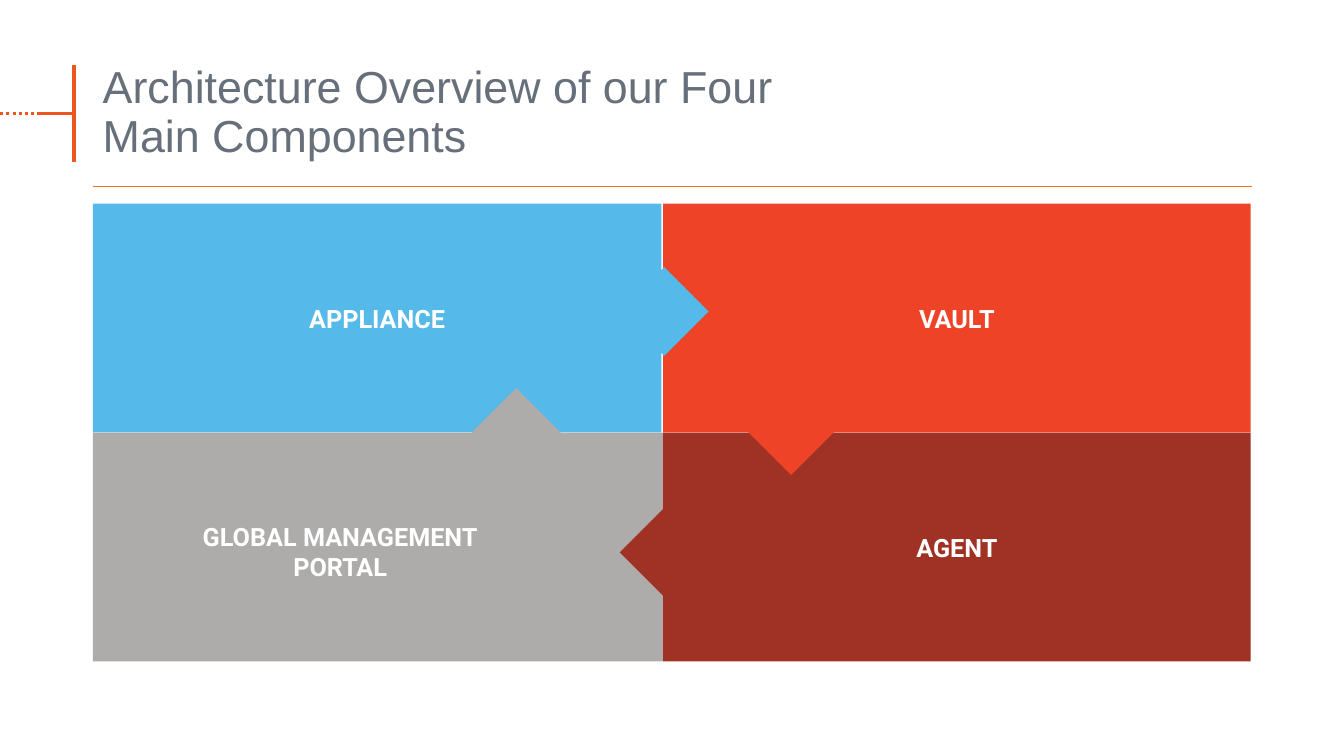
from pptx import Presentation
from pptx.dml.color import RGBColor
from pptx.enum.dml import MSO_LINE
from pptx.enum.shapes import MSO_CONNECTOR, MSO_SHAPE
from pptx.enum.text import MSO_ANCHOR, PP_ALIGN
from pptx.oxml.ns import qn
from pptx.util import Cm, Pt
from lxml.etree import SubElement

COLORS = {
    "accent": "ED551E",
    "rule": "F26E21",
    "title": "666F7A",
    "label": "FFFFFF",
    "appliance": "55BAE9",
    "vault": "EE4327",
    "portal": "AEACAB",
    "agent": "9F3224",
}


def color(name):
    return RGBColor.from_string(COLORS[name])


def add_line(page, start, end, tint, weight, dash=None):
    line = page.shapes.add_connector(
        MSO_CONNECTOR.STRAIGHT, *(Cm(value) for value in (*start, *end))
    )
    line.line.color.rgb = color(tint)
    line.line.width = Pt(weight)
    if dash:
        line.line.dash_style = dash
    SubElement(line._element.spPr, qn("a:effectLst"))


def add_shape(page, kind, box, tint):
    shape = page.shapes.add_shape(kind, *(Cm(value) for value in box))
    shape.shadow.inherit = False
    shape.fill.solid()
    shape.fill.fore_color.rgb = color(tint)
    shape.line.fill.background()
    return shape


def add_textbox(page, box):
    return page.shapes.add_textbox(*(Cm(value) for value in box))


def write(shape, lines, font, size, tint, bold=False, align=PP_ALIGN.LEFT, spacing=1.0):
    frame = shape.text_frame
    frame.word_wrap = True
    frame.vertical_anchor = MSO_ANCHOR.MIDDLE
    for index, text in enumerate(lines):
        para = frame.add_paragraph() if index else frame.paragraphs[0]
        para.alignment = align
        para.line_spacing = spacing
        span = para.add_run()
        span.text = text
        span.font.name = font
        span.font.size = Pt(size)
        span.font.bold = bold
        span.font.color.rgb = color(tint)


def write_label(shape, *lines):
    write(shape, lines, "Roboto", 18, "label", bold=True, align=PP_ALIGN.CENTER)


def add_header(page, left, top, width, height):
    bar = left - 0.48
    middle = top + 1.85
    add_line(page, (bar, top + 0.61), (bar, top + 3.07), "accent", 2.75)
    add_line(page, (bar / 2, middle), (bar, middle), "accent", 2.25)
    add_line(page, (0, middle), (bar / 2, middle), "accent", 2.25, MSO_LINE.ROUND_DOT)
    bottom = top + height
    add_line(page, (left, bottom), (left + width, bottom), "rule", 0.25, MSO_LINE.ROUND_DOT)
    title = add_textbox(page, (left, top, 19.23, height))
    write(title, ["Architecture Overview of our Four Main Components"],
          "Arial", 32, "title", spacing=0.9)


def add_components(page, left, top, width, height):
    row = height / 2
    seam = 14.37
    right = width - seam
    tiles = [
        ("appliance", 0, 0, seam - 0.04, "APPLIANCE"),
        ("vault", seam, 0, right, "VAULT"),
        ("portal", 0, row, seam, None),
        ("agent", seam, row, right, "AGENT"),
    ]
    for tint, x, y, tile_width, label in tiles:
        tile = add_shape(page, MSO_SHAPE.RECTANGLE, (left + x, top + y, tile_width, row), tint)
        if label:
            write_label(tile, label)

    size = 2.24
    pointers = [
        ("appliance", seam + 0.03, 2.72),
        ("vault", 17.6, row - 0.05),
        ("agent", seam + 0.03, 8.79),
        ("portal", 10.67, row),
    ]
    for tint, x, y in pointers:
        box = (left + x - size / 2, top + y - size / 2, size, size)
        add_shape(page, MSO_SHAPE.DIAMOND, box, tint)

    portal = add_textbox(page, (left, top + row + 0.4, 12.47, 5.18))
    write_label(portal, "GLOBAL MANAGEMENT", "PORTAL")


def main():
    deck = Presentation()
    deck.slide_width = Cm(33.87)
    deck.slide_height = Cm(19.05)
    page = deck.slides.add_slide(deck.slide_layouts[6])
    add_header(page, 2.34, 1.02, 29.21, 3.68)
    add_components(page, 2.34, 5.13, 29.18, 11.54)
    deck.save("out.pptx")


if __name__ == "__main__":
    main()
